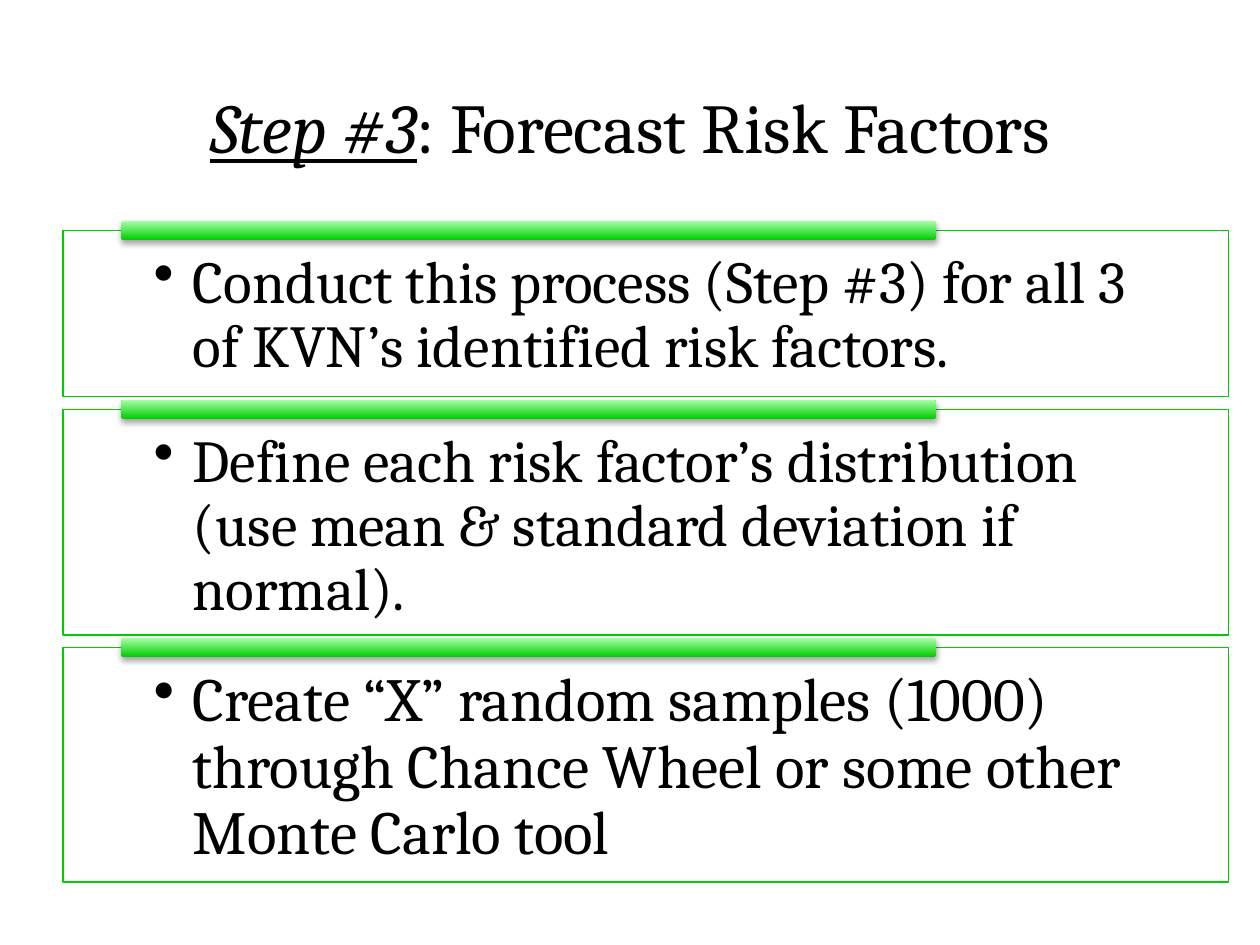
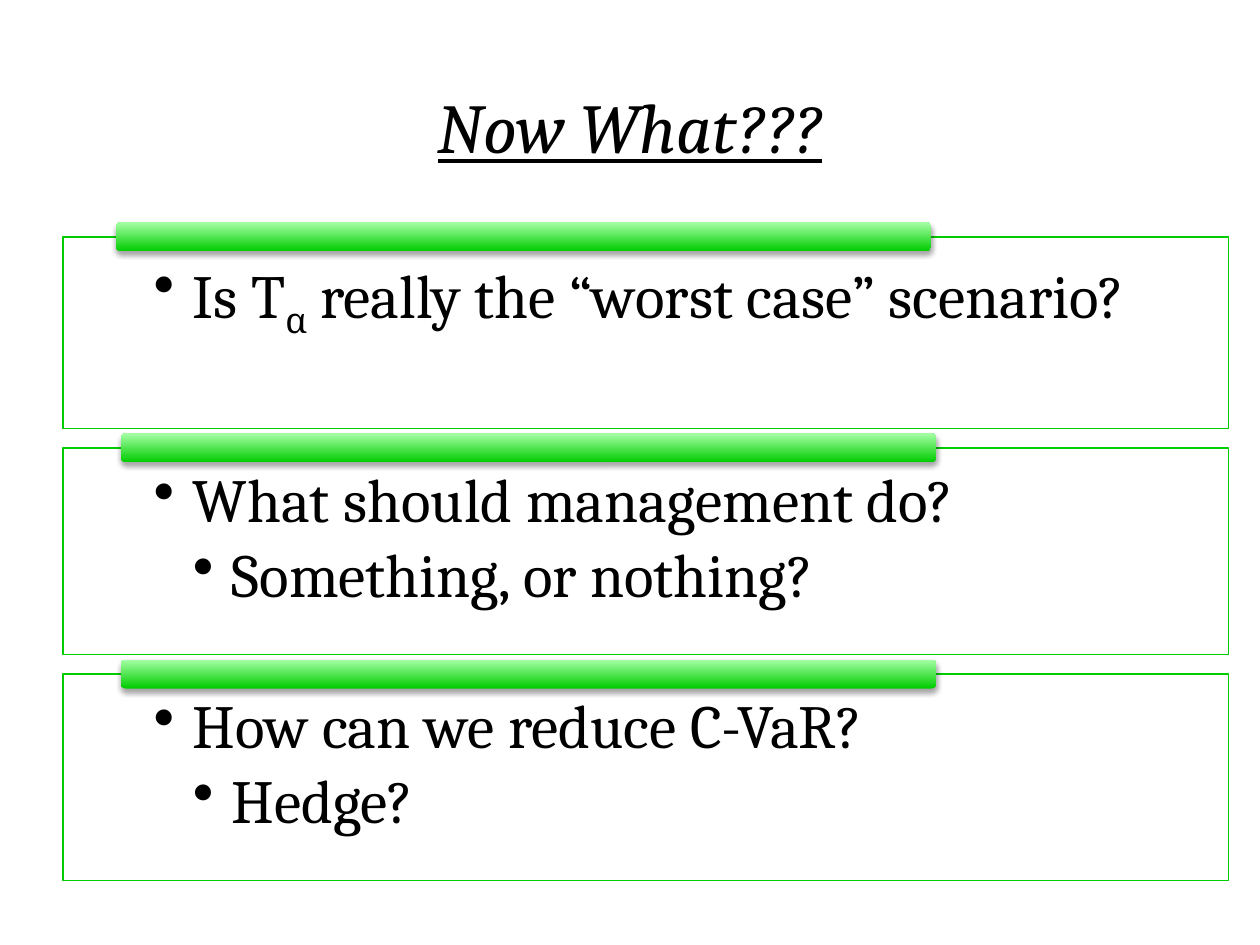
"""Build two slides of stacked cards, each topped by a green gradient bar."""
from lxml.etree import SubElement
from pptx import Presentation
from pptx.dml.color import RGBColor
from pptx.enum.shapes import MSO_SHAPE as Shape
from pptx.enum.text import MSO_ANCHOR as Anchor, PP_ALIGN as Align
from pptx.oxml.ns import qn
from pptx.util import Inches, Pt

WHITE = RGBColor(0xFF, 0xFF, 0xFF)
BLACK = RGBColor(0x00, 0x00, 0x00)
GREEN = RGBColor(0x00, 0xCC, 0x00)
PALE_GREEN = RGBColor(0xA5, 0xFF, 0xA5)

FONT = "Cambria"
COLUMNS, ROWS = 40, 30
CARD_LEFT, CARD_WIDTH = 2, 37
BAR_LEFT, BAR_WIDTH = 3.84, 25.88
INDENT = Inches(0.31)

EMPHASIS = {"italic": True, "underline": True}
SUBSCRIPT = {"baseline": "-25000"}


class Deck:
    def __init__(self):
        self.presentation = Presentation()
        self.presentation.slide_width = Inches(10)
        self.presentation.slide_height = Inches(7.5)
        self.column = self.presentation.slide_width / COLUMNS
        self.row = self.presentation.slide_height / ROWS
        self.slide = None

    def box(self, left, top, width, height):
        return (round(left * self.column), round(top * self.row),
                round(width * self.column), round(height * self.row))

    def add_slide(self):
        self.slide = self.presentation.slides.add_slide(
            self.presentation.slide_layouts[6])

    def add_runs(self, paragraph, runs, size):
        for text, style in runs:
            run = paragraph.add_run()
            run.text = text
            run.font.name = FONT
            run.font.size = Pt(size)
            run.font.color.rgb = BLACK
            run.font.italic = style.get("italic")
            run.font.underline = style.get("underline")
            if "baseline" in style:
                run.font._element.set("baseline", style["baseline"])

    def title(self, *runs):
        shape = self.slide.shapes.add_textbox(*self.box(3, 2, 34, 4))
        frame = shape.text_frame
        frame.word_wrap = True
        frame.vertical_anchor = Anchor.MIDDLE
        frame.paragraphs[0].alignment = Align.CENTER
        self.add_runs(frame.paragraphs[0], runs, 40)

    def bullet(self, paragraph, level, runs, size):
        paragraph.alignment = Align.LEFT
        paragraph.level = level
        paragraph.line_spacing = 0.9
        paragraph.space_after = Pt(0.15 * size)
        self.add_runs(paragraph, runs, size)
        properties = paragraph._p.get_or_add_pPr()
        properties.set("marL", str(INDENT * level))
        properties.set("indent", str(-INDENT))
        SubElement(properties, qn("a:buChar"), char="•")

    def card(self, top, height, bullets, size):
        shape = self.slide.shapes.add_shape(
            Shape.RECTANGLE, *self.box(CARD_LEFT, top, CARD_WIDTH, height))
        shape.shadow.inherit = False
        shape.fill.solid()
        shape.fill.fore_color.rgb = WHITE
        fill_color = next(shape.element.spPr.iter(qn("a:srgbClr")))
        SubElement(fill_color, qn("a:alpha"), val="90000")
        shape.line.color.rgb = GREEN
        shape.line.width = Pt(0.75)
        frame = shape.text_frame
        frame.word_wrap = True
        frame.vertical_anchor = Anchor.TOP
        frame.margin_left = frame.margin_right = Inches(0.72)
        frame.margin_top = Inches(0.17)
        frame.margin_bottom = Inches(0.26)
        for index, runs in enumerate(bullets):
            paragraph = frame.add_paragraph() if index else frame.paragraphs[0]
            self.bullet(paragraph, index + 1, runs, size)

    def bar(self, left, middle, height):
        shape = self.slide.shapes.add_shape(
            Shape.ROUNDED_RECTANGLE,
            *self.box(left, middle - height / 2, BAR_WIDTH, height))
        shape.fill.gradient()
        shape.fill.gradient_angle = 90
        for stop, color in zip(shape.fill.gradient_stops, (GREEN, PALE_GREEN)):
            stop.color.rgb = color
        shape.line.fill.background()
        shape.shadow.inherit = False
        effects = shape.element.spPr.find(qn("a:effectLst"))
        shadow = SubElement(effects, qn("a:outerShdw"), blurRad=str(Pt(3.1)),
                            dist=str(Pt(1.8)), dir="5400000", rotWithShape="0")
        shadow_color = SubElement(shadow, qn("a:srgbClr"), val=str(BLACK))
        SubElement(shadow_color, qn("a:alpha"), val="35000")

    def stack(self, top, gap, bar_height, cards, first_bar_left=BAR_LEFT):
        bar_left = first_bar_left
        for height, size, bullets in cards:
            self.card(top, height, bullets, size)
            self.bar(bar_left, top, bar_height)
            top += height + gap
            bar_left = BAR_LEFT


def plain(text):
    return [(text, {})]


def main():
    deck = Deck()

    deck.add_slide()
    deck.title(("Step #3", EMPHASIS), (": Forecast Risk Factors", {}))
    deck.stack(7.32, 0.4, 0.6, [
        (5.28, 34, [plain("Conduct this process (Step #3) for all 3 of "
                          "KVN’s identified risk factors.")]),
        (7.16, 34, [plain("Define each risk factor’s distribution (use mean "
                          "& standard deviation if normal).")]),
        (7.44, 35, [plain("Create “X” random samples (1000) through "
                          "Chance Wheel or some other Monte Carlo tool")]),
    ])

    deck.add_slide()
    deck.title(("Now What???", EMPHASIS))
    deck.stack(7.52, 0.62, 0.92, [
        (6.08, 35, [[("Is T", {}), ("α", SUBSCRIPT),
                     (" really the “worst case” scenario?", {})]]),
        (6.56, 35, [plain("What should management do?"),
                    plain("Something, or nothing?")]),
        (6.56, 35, [plain("How can we reduce C-VaR?"), plain("Hedge?")]),
    ], first_bar_left=3.68)

    deck.presentation.save("out.pptx")


if __name__ == "__main__":
    main()
